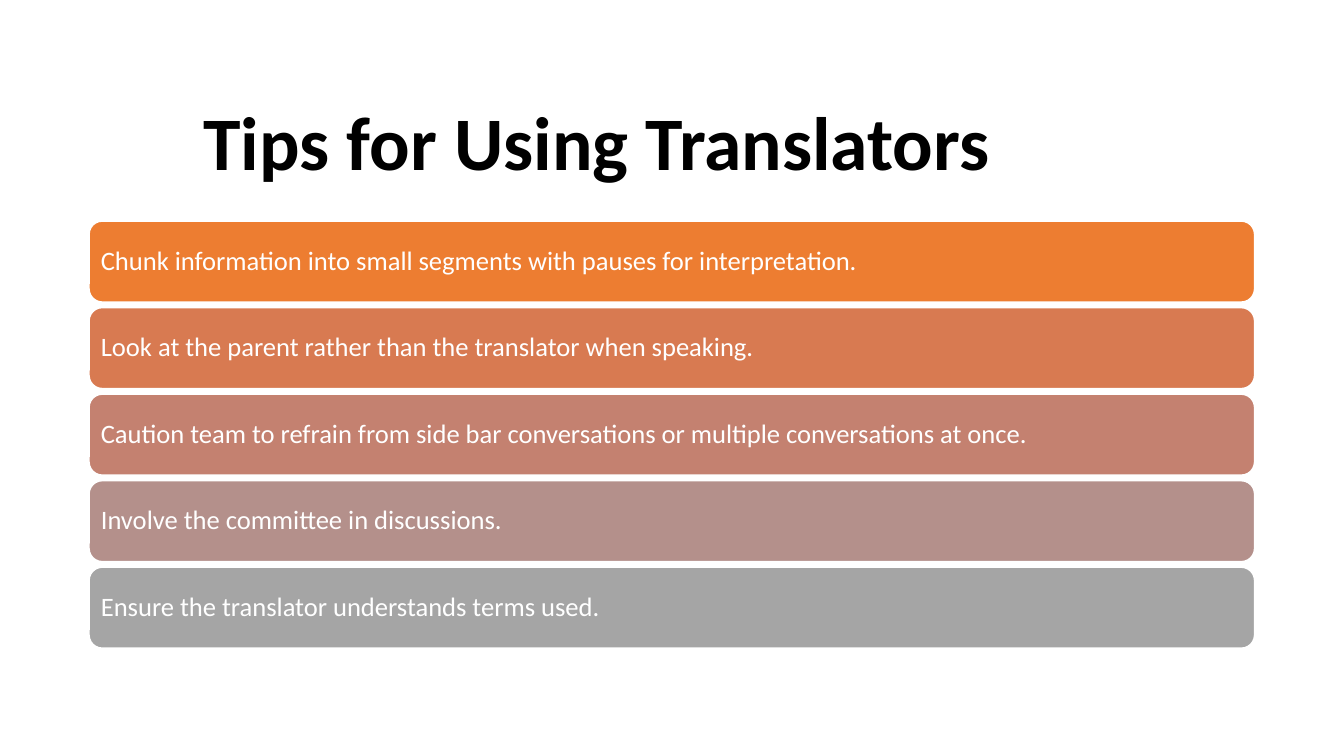
from pptx import Presentation
from pptx.dml.color import RGBColor
from pptx.enum.shapes import MSO_SHAPE as Shape
from pptx.enum.text import MSO_ANCHOR as Anchor, PP_ALIGN as Align
from pptx.util import Pt

FONT = "Calibri"
BLACK = RGBColor(0x00, 0x00, 0x00)
WHITE = RGBColor(0xFF, 0xFF, 0xFF)
ORANGE = RGBColor(0xED, 0x7D, 0x31)
TERRACOTTA = RGBColor(0xD8, 0x7A, 0x51)
ROSE = RGBColor(0xC4, 0x81, 0x70)
MAUVE = RGBColor(0xB4, 0x90, 0x8B)
GRAY = RGBColor(0xA5, 0xA5, 0xA5)

TIPS = [
    ("Chunk information into small segments with pauses for interpretation.", ORANGE),
    ("Look at the parent rather than the translator when speaking.", TERRACOTTA),
    ("Caution team to refrain from side bar conversations or multiple conversations at once.", ROSE),
    ("Involve the committee in discussions.", MAUVE),
    ("Ensure the translator understands terms used.", GRAY),
]
BAR_LEFT, BAR_TOP, BAR_WIDTH, BAR_HEIGHT = 63.4, 157.7, 833, 58.3
BAR_PITCH = 61.8
BAR_INSET = Pt(5.8)

presentation = Presentation()
presentation.slide_width = Pt(960)
presentation.slide_height = Pt(540)
slide = presentation.slides.add_slide(presentation.slide_layouts[5])

# Title
title = slide.shapes.title
title.left, title.top, title.width, title.height = Pt(138.2), Pt(62.6), Pt(683.3), Pt(82.8)
title.text_frame.text = "Tips for Using Translators"
title.text_frame.vertical_anchor = Anchor.MIDDLE
paragraph = title.text_frame.paragraphs[0]
paragraph.alignment = Align.LEFT
paragraph.line_spacing = 0.9
paragraph.font.name = FONT
paragraph.font.size = Pt(54)
paragraph.font.bold = True
paragraph.font.color.rgb = BLACK

# One rounded bar per tip
for row, (tip, color) in enumerate(TIPS):
    bar = slide.shapes.add_shape(
        Shape.ROUNDED_RECTANGLE,
        Pt(BAR_LEFT), Pt(BAR_TOP + row * BAR_PITCH), Pt(BAR_WIDTH), Pt(BAR_HEIGHT))
    bar.shadow.inherit = False
    bar.fill.solid()
    bar.fill.fore_color.rgb = color
    bar.line.color.rgb = WHITE
    bar.line.width = Pt(1.5)

    frame = bar.text_frame
    frame.text = tip
    frame.word_wrap = True
    frame.vertical_anchor = Anchor.MIDDLE
    frame.margin_left = frame.margin_right = BAR_INSET
    frame.margin_top = frame.margin_bottom = BAR_INSET
    paragraph = frame.paragraphs[0]
    paragraph.alignment = Align.LEFT
    paragraph.line_spacing = 0.9
    paragraph.font.name = FONT
    paragraph.font.size = Pt(19)
    paragraph.font.color.rgb = WHITE

presentation.save("out.pptx")
